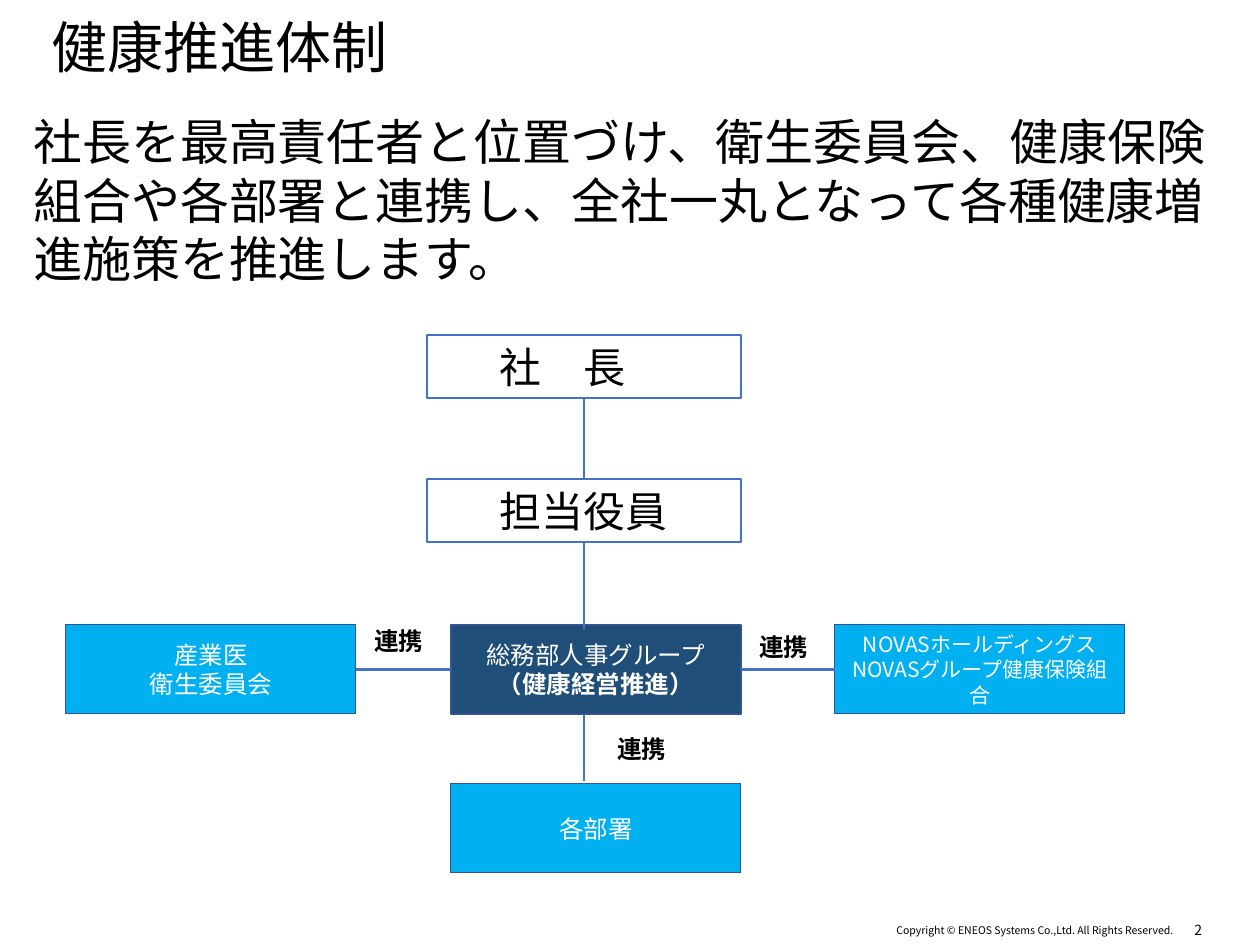
from lxml.etree import SubElement
from pptx import Presentation
from pptx.dml.color import RGBColor
from pptx.enum.shapes import MSO_CONNECTOR, MSO_SHAPE
from pptx.enum.text import MSO_ANCHOR, PP_ALIGN
from pptx.oxml.ns import qn
from pptx.util import Pt

PX = 914400 // 126
FONT = "Noto Sans CJK JP"
BLACK = RGBColor(0x00, 0x00, 0x00)
WHITE = RGBColor(0xFF, 0xFF, 0xFF)
BLUE = RGBColor(0x44, 0x72, 0xC4)
NAVY = RGBColor(0x1F, 0x4E, 0x79)
SKY = RGBColor(0x00, 0xB0, 0xF0)
EDGE = RGBColor(0x32, 0x54, 0x91)

TITLE = "健康推進体制"
LEAD = "社長を最高責任者と位置づけ、衛生委員会、健康保険組合や各部署と連携し、全社一丸となって各種健康増進施策を推進します。"
RIGHTS = "Copyright © ENEOS Systems Co.,Ltd. All Rights Reserved."
LINK = "連携"

CHIEF = (314, 63)
UNIT = (290, 89)
TOP = dict(size=24, color=BLACK, anchor=MSO_ANCHOR.TOP)
MID = dict(size=14, color=WHITE, anchor=MSO_ANCHOR.MIDDLE)
BOXES = {
    "head": (427, 335, CHIEF, ["社　長　"], None, BLUE, 1.5, TOP),
    "exec": (427, 479, CHIEF, ["担当役員"], None, BLUE, 1.5, TOP),
    "staff": (451, 625, UNIT, ["総務部人事グループ", "（健康経営推進）"],
              NAVY, EDGE, 1, dict(MID, bold=(False, True))),
    "doctor": (66, 625, UNIT, ["産業医", "衛生委員会"], SKY, EDGE, 0.5, MID),
    "fund": (835, 625, UNIT, ["NOVASホールディングス", "NOVASグループ健康保険組合"],
             SKY, EDGE, 0.5, dict(MID, size=12)),
    "depts": (451, 784, UNIT, ["各部署"], SKY, EDGE, 0.5, MID),
}
JOINS = [("head", 2, "exec", 0), ("doctor", 3, "staff", 1), ("staff", 3, "fund", 1)]
AXIS = 584
LABELS = [(362, 620), (747, 626), (605, 728)]

deck = Presentation()
deck.slide_width, deck.slide_height = 1260 * PX, 945 * PX
slide = deck.slides.add_slide(deck.slide_layouts[6])


def write(shape, lines, size=14, color=BLACK, bold=(False,), align=PP_ALIGN.LEFT,
          anchor=MSO_ANCHOR.TOP, inset=None, space=None):
    frame = shape.text_frame
    frame.word_wrap = True
    frame.vertical_anchor = anchor
    if inset is not None:
        frame.margin_left = frame.margin_right = inset
        frame.margin_top = frame.margin_bottom = inset
    for i, line in enumerate(lines):
        para = frame.paragraphs[0] if i == 0 else frame.add_paragraph()
        para.alignment = align
        if space:
            para.line_spacing = space
        run = para.add_run()
        run.text = line
        font = run.font
        font.size = Pt(size)
        font.bold = bold[i % len(bold)]
        font.color.rgb = color
        font.name = FONT
        SubElement(run._r.get_or_add_rPr(), qn("a:ea"), typeface=FONT)


def label(x, y, w, h, text, **style):
    area = slide.shapes.add_textbox(x * PX, y * PX, w * PX, h * PX)
    write(area, [text], **style)


def box(x, y, size, lines, fill, edge, width, style):
    shape = slide.shapes.add_shape(
        MSO_SHAPE.RECTANGLE, x * PX, y * PX, size[0] * PX, size[1] * PX)
    shape.shadow.inherit = False
    if fill is None:
        shape.fill.background()
    else:
        shape.fill.solid()
        shape.fill.fore_color.rgb = fill
    shape.line.color.rgb = edge
    shape.line.width = Pt(width)
    write(shape, lines, align=PP_ALIGN.CENTER, **style)
    return shape


def wire(x1=0, y1=0, x2=0, y2=0):
    line = slide.shapes.add_connector(
        MSO_CONNECTOR.STRAIGHT, x1 * PX, y1 * PX, x2 * PX, y2 * PX)
    line.line.color.rgb = BLUE
    line.line.width = Pt(1.5)
    SubElement(line._element.spPr, qn("a:effectLst"))
    return line


foot = dict(align=PP_ALIGN.RIGHT, anchor=MSO_ANCHOR.MIDDLE, inset=0)
label(1173, 920, 29, 20, "2", size=8, **foot)
label(776, 924, 397, 13, RIGHTS, size=6, **foot)
label(39, 14, 1143, 76, TITLE, size=32, space=0.9)
label(21, 105, 1230, 190, LEAD, size=28)

nodes = {name: box(*data) for name, data in BOXES.items()}
for start, out, end, into in JOINS:
    line = wire()
    line.begin_connect(nodes[start], out)
    line.end_connect(nodes[end], into)
wire(AXIS, 542, AXIS, 629).begin_connect(nodes["exec"], 2)
wire(AXIS, 714, AXIS, 781)

for x, y in LABELS:
    label(x, y, 84, 43, LINK, bold=(True,))

deck.save("out.pptx")
